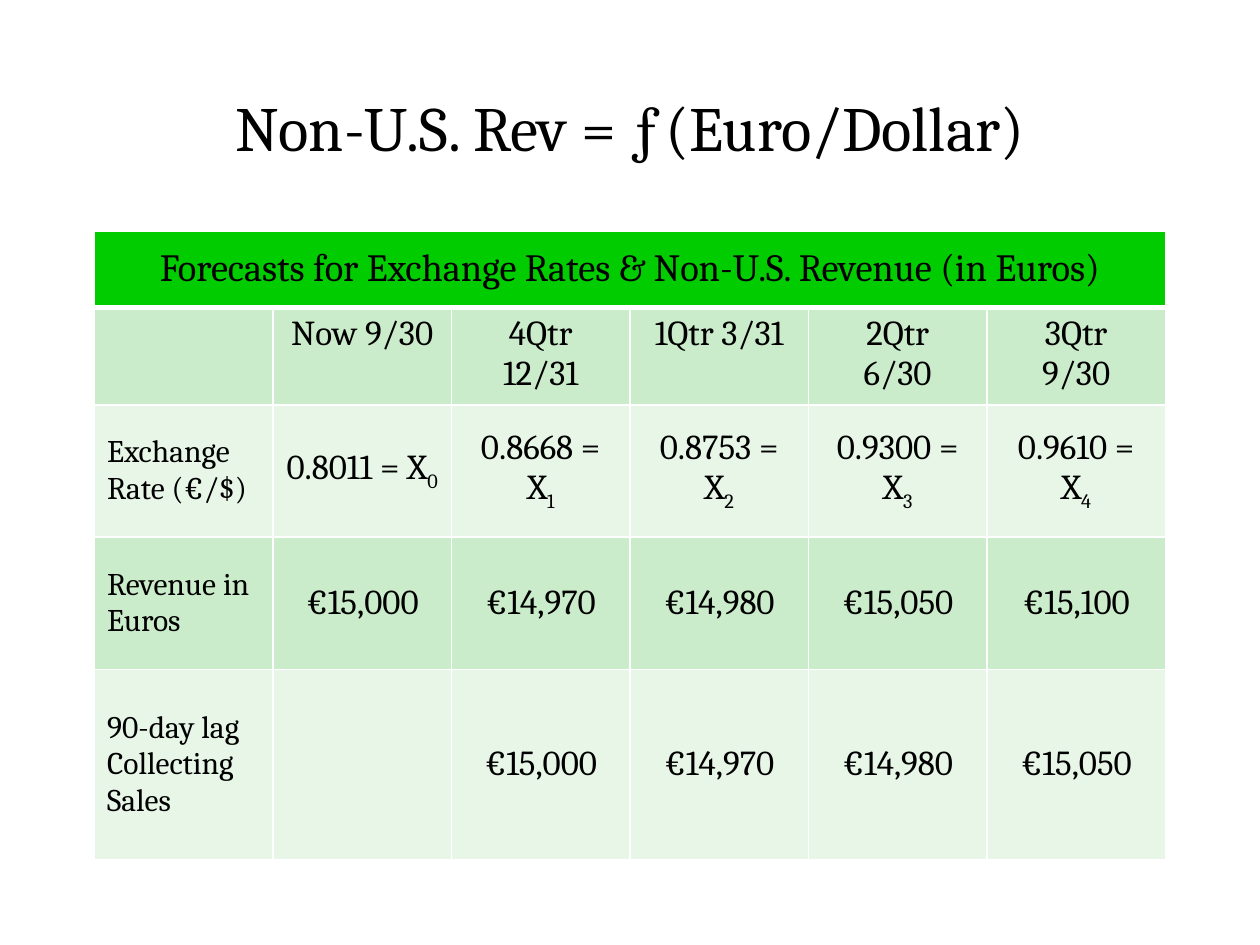
import pptx
import pptx.dml.color
import pptx.enum.text
import pptx.oxml.ns
import pptx.util
import lxml.etree

ALIGN = pptx.enum.text.PP_ALIGN
ANCHOR = pptx.enum.text.MSO_ANCHOR


def color(value):
    return pptx.dml.color.RGBColor.from_string(value)


class Deck:
    font = "Cambria"
    ink = "000000"
    line = "FFFFFF"
    header = "00CC00"
    bands = ("CBECCB", "E7F6E7")

    def __init__(self, width, height):
        self.prs = pptx.Presentation()
        self.prs.slide_width = pptx.util.Inches(width)
        self.prs.slide_height = pptx.util.Inches(height)
        self.s = self.prs.slides.add_slide(self.prs.slide_layouts[6])

    def x(self, percent):
        return round(self.prs.slide_width * percent / 100)

    def y(self, percent):
        return round(self.prs.slide_height * percent / 100)

    def run(self, p, text, size, subscript=False):
        r = p.add_run()
        r.text = text
        r.font.name = self.font
        r.font.size = pptx.util.Pt(size)
        r.font.color.rgb = color(self.ink)
        if subscript:
            r.font._element.set("baseline", "-25000")

    def title(self, text, left, top, width, height, size):
        sp = self.s.shapes.add_textbox(self.x(left), self.y(top), self.x(width), self.y(height))
        tf = sp.text_frame
        tf.word_wrap = True
        tf.vertical_anchor = ANCHOR.MIDDLE
        p = tf.paragraphs[0]
        p.alignment = ALIGN.CENTER
        self.run(p, text, size)

    def border(self, cell, side, width):
        tc_pr = cell._tc.get_or_add_tcPr()
        qn = pptx.oxml.ns.qn
        ln = lxml.etree.SubElement(tc_pr, qn("a:ln" + side), w=str(pptx.util.Pt(width)))
        fill = lxml.etree.SubElement(ln, qn("a:solidFill"))
        lxml.etree.SubElement(fill, qn("a:srgbClr"), val=self.line)

    def cell(self, cell, text, size, align, anchor, fill, top=1, bottom=1):
        for side, width in (("L", 1), ("R", 1), ("T", top), ("B", bottom)):
            self.border(cell, side, width)
        cell.fill.solid()
        cell.fill.fore_color.rgb = color(fill)
        cell.vertical_anchor = anchor
        p = cell.text_frame.paragraphs[0]
        p.alignment = align
        for i, line in enumerate(text.split("\n")):
            if i:
                p.add_line_break()
            base, _, sub = line.partition("_")
            if base:
                self.run(p, base, size)
            if sub:
                self.run(p, sub, size, subscript=True)

    def table(self, heading, rows, left, top, width, heights):
        cols = len(rows[0])
        frame = self.s.shapes.add_table(len(heights), cols, self.x(left), self.y(top),
                                        self.x(width), self.y(sum(heights)))
        table = frame.table
        for col in table.columns:
            col.width = self.x(width / cols)
        for row, height in zip(table.rows, heights):
            row.height = self.y(height)
        for j in range(cols):
            self.cell(table.cell(0, j), "" if j else heading, 22, ALIGN.CENTER,
                      ANCHOR.MIDDLE, self.header, bottom=3)
        table.cell(0, 0).merge(table.cell(0, cols - 1))
        for i, row in enumerate(rows):
            for j, text in enumerate(row):
                self.cell(table.cell(i + 1, j), text,
                          20 if j else 18,
                          ALIGN.CENTER if j else ALIGN.LEFT,
                          ANCHOR.MIDDLE if i else ANCHOR.TOP,
                          self.bands[i % 2], top=1 if i else 3)


def main():
    deck = Deck(10, 7.5)
    deck.title("Non-U.S. Rev = ƒ(Euro/Dollar)", 7.5, 6.67, 85, 13.33, 36)
    rates = ("0.8011", "0.8668", "0.8753", "0.9300", "0.9610")
    revenue = ("€15,000", "€14,970", "€14,980", "€15,050", "€15,100")
    rows = (
        ("", "Now 9/30", "4Qtr\n12/31", "1Qtr 3/31", "2Qtr\n6/30", "3Qtr\n9/30"),
        ("Exchange Rate (€/$)", *(f"{rate} = X_{i}" for i, rate in enumerate(rates))),
        ("Revenue in Euros", *revenue),
        ("90-day lag Collecting Sales", "", *revenue[:-1]),
    )
    deck.table("Forecasts for Exchange Rates & Non-U.S. Revenue (in Euros)", rows,
               7.5, 24.44, 85, (8.13, 10.27, 14, 14, 20.13))
    deck.prs.save("out.pptx")


if __name__ == "__main__":
    main()
